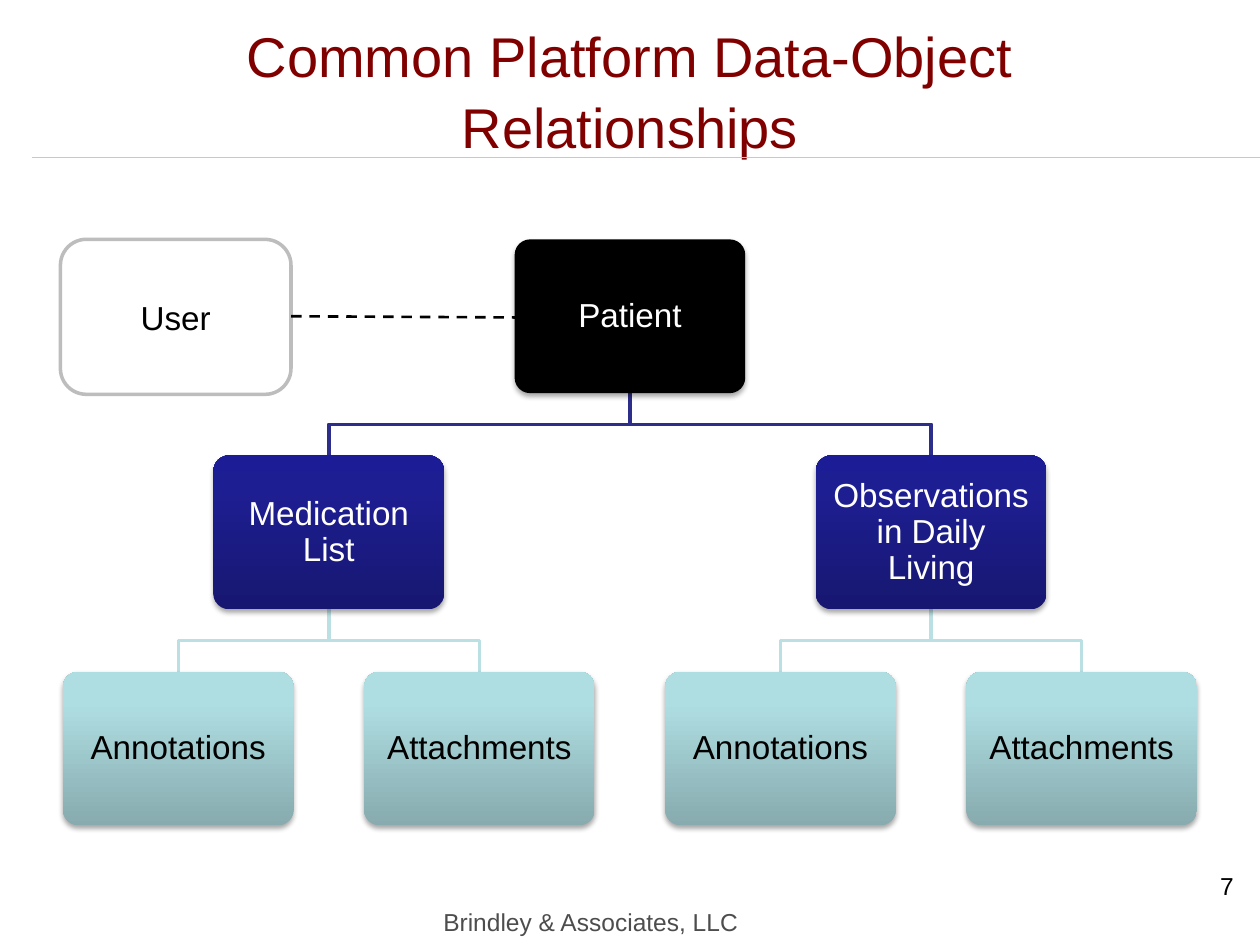
from dataclasses import dataclass
from typing import Optional

from lxml.etree import SubElement
from pptx import Presentation
from pptx.dml.color import RGBColor
from pptx.enum.dml import MSO_LINE
from pptx.enum.shapes import MSO_CONNECTOR, MSO_SHAPE
from pptx.enum.text import MSO_ANCHOR, PP_ALIGN
from pptx.oxml import parse_xml
from pptx.oxml.ns import nsdecls, qn
from pptx.util import Inches, Pt

COLORS = {
    "title": "800000", "rule": "CACCAC", "black": "000000", "white": "FFFFFF",
    "footer": "4D4D4D", "user_line": "BDBDBD",
    "category_link": "2D2D8A", "detail_link": "BBE0E3",
}
GRADIENTS = {
    "category": ((0, "171771"), (80, "1E1E93"), (100, "1C1C96")),
    "detail": ((0, "87ABAE"), (80, "AFDEE2"), (100, "AFE0E4")),
}
FONT = "Arial"
BOX_WIDTH, BOX_HEIGHT = 1.83, 1.22
CENTER, TOP = 5, 1.9
COLUMN_STEP, LEVEL_STEP = 2.39, 1.715


@dataclass(frozen=True)
class Node:
    label: str
    column: float
    level: int
    text_color: str
    gradient: Optional[str] = None
    link_color: str = ""
    children: tuple["Node", ...] = ()

    @property
    def x(self) -> float:
        return CENTER + self.column * COLUMN_STEP

    @property
    def y(self) -> float:
        return TOP + self.level * LEVEL_STEP


def category(label: str, column: float) -> Node:
    details = tuple(
        Node(name, column + offset, 2, "black", "detail")
        for name, offset in (("Annotations", -0.5), ("Attachments", 0.5))
    )
    return Node(label, column, 1, "white", "category", "detail_link", details)


PATIENT = Node("Patient", 0, 0, "white", None, "category_link", (
    category("Medication List", -1),
    category("Observations in Daily Living", 1),
))


def color(name: str) -> RGBColor:
    return RGBColor.from_string(COLORS[name])


def write(frame, text: str, size: float, color_name: str, align=PP_ALIGN.CENTER) -> None:
    frame.text = text
    frame.word_wrap = True
    paragraph = frame.paragraphs[0]
    paragraph.alignment = align
    for span in paragraph.runs:
        span.font.size = Pt(size)
        span.font.name = FONT
        span.font.color.rgb = color(color_name)


def add_rounded_box(page, left: float, top: float, width: float, height: float):
    box = page.shapes.add_shape(
        MSO_SHAPE.ROUNDED_RECTANGLE,
        Inches(left), Inches(top), Inches(width), Inches(height),
    )
    box.shadow.inherit = False
    box.text_frame.vertical_anchor = MSO_ANCHOR.MIDDLE
    return box


def fill_gradient(box, name: str) -> None:
    stops = "".join(
        f'<a:gs pos="{position * 1000}"><a:srgbClr val="{value}"/></a:gs>'
        for position, value in GRADIENTS[name]
    )
    gradient = parse_xml(
        f'<a:gradFill {nsdecls("a")} rotWithShape="1"><a:gsLst>{stops}</a:gsLst>'
        '<a:lin ang="16200000" scaled="0"/></a:gradFill>'
    )
    box._element.spPr.find(qn("a:prstGeom")).addnext(gradient)


def add_shadow(box) -> None:
    effects = box._element.spPr.find(qn("a:effectLst"))
    effects.append(parse_xml(
        f'<a:outerShdw {nsdecls("a")} blurRad="{Pt(3.1)}" dist="{Pt(1.8)}" '
        'dir="5400000" rotWithShape="0"><a:srgbClr val="000000">'
        '<a:alpha val="35000"/></a:srgbClr></a:outerShdw>'
    ))


def add_node(page, node: Node) -> None:
    box = add_rounded_box(page, node.x - BOX_WIDTH / 2, node.y, BOX_WIDTH, BOX_HEIGHT)
    box.adjustments[0] = 0.1
    box.line.fill.background()
    if node.gradient:
        fill_gradient(box, node.gradient)
    else:
        box.fill.solid()
        box.fill.fore_color.rgb = color("black")
    add_shadow(box)
    frame = box.text_frame
    frame.margin_left = frame.margin_right = Inches(0.08)
    frame.margin_top = frame.margin_bottom = Inches(0.08)
    write(frame, node.label, 19, node.text_color)
    frame.paragraphs[0].line_spacing = 0.9


def add_link(page, parent: Node, child: Node) -> None:
    bottom = parent.y + BOX_HEIGHT
    middle = (bottom + child.y) / 2
    builder = page.shapes.build_freeform(Inches(parent.x), Inches(bottom))
    builder.add_line_segments(
        [(Inches(x), Inches(y)) for x, y in
         ((parent.x, middle), (child.x, middle), (child.x, child.y))],
        close=False,
    )
    link = builder.convert_to_shape()
    link.shadow.inherit = False
    link.fill.background()
    link.line.color.rgb = color(parent.link_color)
    link.line.width = Pt(2)


def add_tree(page, node: Node) -> None:
    for child in node.children:
        add_link(page, node, child)
    add_node(page, node)
    for child in node.children:
        add_tree(page, child)


def add_line(page, start: tuple[float, float], end: tuple[float, float],
             color_name: str, width: float):
    line = page.shapes.add_connector(
        MSO_CONNECTOR.STRAIGHT, *(Inches(value) for value in start + end)
    )
    line.line.color.rgb = color(color_name)
    line.line.width = Pt(width)
    SubElement(line._element.spPr, qn("a:effectLst"))
    return line


def add_note(page, left: float, top: float, width: float, text: str,
             color_name: str, align) -> None:
    box = page.shapes.add_textbox(Inches(left), Inches(top), Inches(width), Inches(0.52))
    write(box.text_frame, text, 14, color_name, align)


def add_title(page, text: str) -> None:
    title = page.shapes.title
    title.left, title.top = Inches(0.5), Inches(0.08)
    title.width, title.height = Inches(9), Inches(1.25)
    title.text_frame.vertical_anchor = MSO_ANCHOR.MIDDLE
    write(title.text_frame, text, 32, "title")
    title.text_frame.paragraphs[0].line_spacing = 1.06


def add_user(page) -> None:
    user = add_rounded_box(page, 0.48, TOP, BOX_WIDTH, 1.23)
    user.fill.solid()
    user.fill.fore_color.rgb = color("white")
    user.line.color.rgb = color("user_line")
    user.line.width = Pt(2)
    write(user.text_frame, "User", 19, "black")


def main() -> None:
    deck = Presentation()
    deck.slide_width, deck.slide_height = Inches(10), Inches(7.5)
    page = deck.slides.add_slide(deck.slide_layouts[5])
    add_line(page, (0.25, 1.25), (10, 1.25), "rule", 0.75)
    add_title(page, "Common Platform Data-Object Relationships")
    add_tree(page, PATIENT)
    add_note(page, 3.42, 7.15, 3.17, "Brindley & Associates, LLC", "footer", PP_ALIGN.LEFT)
    add_note(page, 7.56, 6.86, 2.33, "7", "black", PP_ALIGN.RIGHT)
    add_user(page)
    association = add_line(page, (2.31, 2.51), (4.14, 2.52), "black", 1.5)
    association.line.dash_style = MSO_LINE.DASH
    deck.save("out.pptx")


if __name__ == "__main__":
    main()
